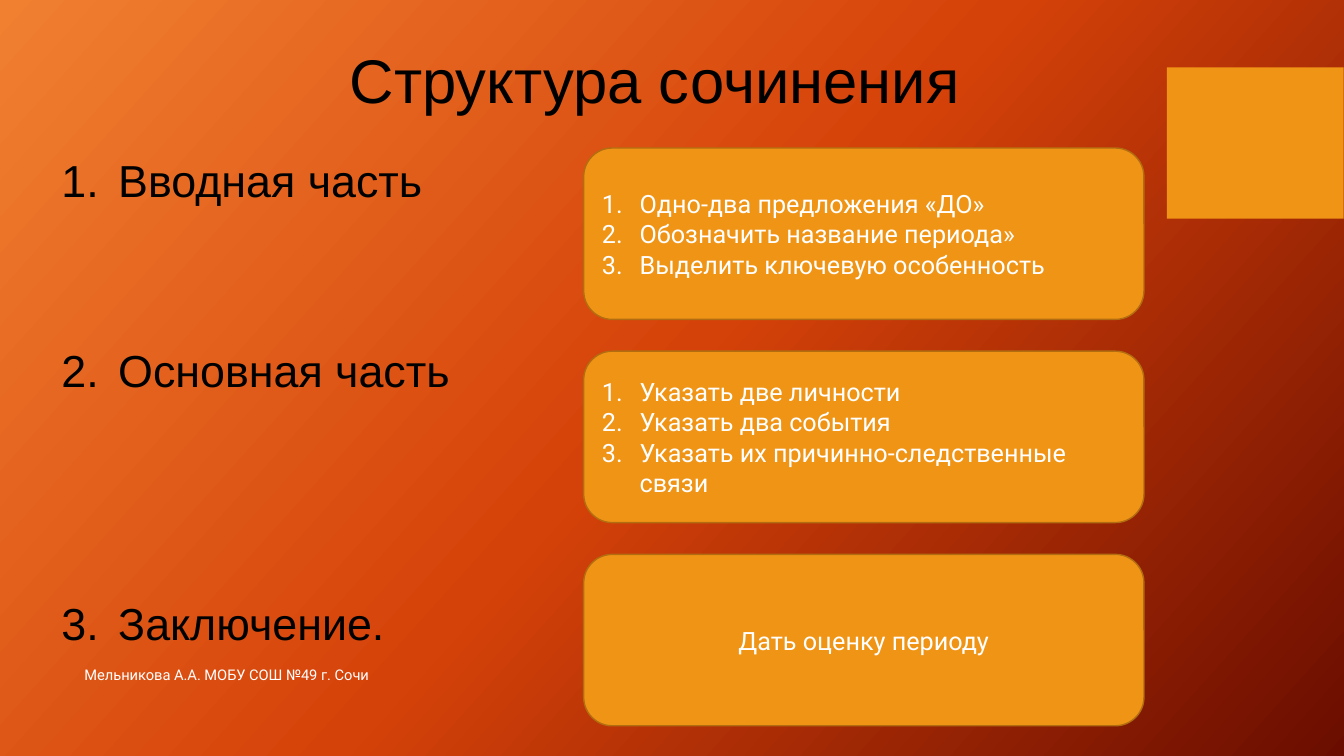
"""Build the slide about the structure of an essay."""
from copy import deepcopy
from dataclasses import dataclass

from lxml.etree import SubElement
from pptx import Presentation
from pptx.dml.color import RGBColor
from pptx.enum.shapes import MSO_SHAPE as Preset
from pptx.enum.text import MSO_ANCHOR as Anchor, PP_ALIGN as Align
from pptx.oxml.ns import qn
from pptx.util import Cm, Pt

ORANGE = RGBColor(0xF0, 0x94, 0x15)
BROWN = RGBColor(0xB2, 0x6D, 0x10)
BLACK = RGBColor(0, 0, 0)
WHITE = RGBColor(0xFF, 0xFF, 0xFF)
GRADIENT = [
    (0, RGBColor(0xF1, 0x80, 0x31)),
    (0.5, RGBColor(0xD5, 0x42, 0x09)),
    (1, RGBColor(0x6A, 0x0D, 0x00)),
]
CARD_LEFT, CARD_TOP, CARD_WIDTH, CARD_HEIGHT, CARD_STEP = 14.71, 3.73, 14.12, 4.32, 5.12


@dataclass(frozen=True)
class TextStyle:
    font: str
    size: float
    color: RGBColor
    indent: float = 0
    align: Align = Align.LEFT


@dataclass(frozen=True)
class Label:
    text: str
    left: float
    top: float
    width: float
    height: float
    style: TextStyle
    anchor: Anchor = Anchor.TOP
    wrap: bool = True


@dataclass(frozen=True)
class Part:
    title: str
    gap_before: float
    steps: list[str]
    style: TextStyle


TITLE = TextStyle("Arial", 44, BLACK)
HEADING = TextStyle("Arial", 32, BLACK, indent=1.43)
STEP = TextStyle("Roboto", 18, WHITE, indent=0.95)
SUMMARY = TextStyle("Roboto", 18, WHITE, align=Align.CENTER)
CREDIT = TextStyle("Roboto", 10.5, WHITE)

LABELS = [
    Label("Структура сочинения", 8.56, 0.94, 16.05, 2.13, TITLE, wrap=False),
    Label("Мельникова А.А. МОБУ СОШ №49 г. Сочи", 1.88, 16.48, 19.08, 1.02,
          CREDIT, Anchor.MIDDLE),
]
PARTS = [
    Part("Вводная часть", 0, [
        "Одно-два предложения «ДО»",
        "Обозначить название периода»",
        "Выделить ключевую особенность",
    ], STEP),
    Part("Основная часть", 97, [
        "Указать две личности",
        "Указать два события",
        "Указать их причинно-следственные связи",
    ], STEP),
    Part("Заключение.", 142.5, ["Дать оценку периоду"], SUMMARY),
]


def write(frame, lines: list[str], style: TextStyle) -> None:
    frame.word_wrap = True
    for index, line in enumerate(lines):
        paragraph = frame.paragraphs[0] if index == 0 else frame.add_paragraph()
        paragraph.text = line
        paragraph.alignment = style.align
        if style.indent:
            properties = paragraph._p.get_or_add_pPr()
            properties.set("marL", str(Cm(style.indent)))
            properties.set("indent", str(-Cm(style.indent)))
            SubElement(properties, qn("a:buFont"), typeface="+mj-lt")
            SubElement(properties, qn("a:buAutoNum"), type="arabicPeriod")
        paragraph.font.name = style.font
        paragraph.font.size = Pt(style.size)
        paragraph.font.color.rgb = style.color


def add_box(slide, preset: Preset, left: float, top: float, width: float, height: float):
    shape = slide.shapes.add_shape(preset, Cm(left), Cm(top), Cm(width), Cm(height))
    shape.shadow.inherit = False
    shape.fill.solid()
    shape.fill.fore_color.rgb = ORANGE
    shape.line.fill.background()
    return shape


def add_card(slide, row: int, part: Part) -> None:
    card = add_box(slide, Preset.ROUNDED_RECTANGLE, CARD_LEFT,
                   CARD_TOP + row * CARD_STEP, CARD_WIDTH, CARD_HEIGHT)
    card.line.color.rgb = BROWN
    card.line.width = Pt(1)
    card.text_frame.vertical_anchor = Anchor.MIDDLE
    write(card.text_frame, part.steps, part.style)


def add_label(slide, label: Label) -> None:
    box = slide.shapes.add_textbox(Cm(label.left), Cm(label.top), Cm(label.width), Cm(label.height))
    write(box.text_frame, [label.text], label.style)
    box.text_frame.word_wrap = label.wrap
    box.text_frame.vertical_anchor = label.anchor


def add_headings(slide, parts: list[Part]) -> None:
    box = slide.shapes.add_textbox(Cm(1.3), Cm(3.73), Cm(10.46), Cm(13.79))
    write(box.text_frame, [part.title for part in parts], HEADING)
    for paragraph, part in zip(box.text_frame.paragraphs, parts):
        if part.gap_before:
            paragraph.space_before = Pt(part.gap_before)


def paint_background(slide) -> None:
    fill = slide.background.fill
    fill.gradient()
    fill.gradient_angle = 360 - 42
    stop_list = slide.background._cSld.find(".//" + qn("a:gsLst"))
    stop_list.append(deepcopy(stop_list[-1]))
    for stop, (position, color) in zip(fill.gradient_stops, GRADIENT):
        stop.position = position
        stop.color.rgb = color


def main() -> None:
    presentation = Presentation()
    presentation.slide_width, presentation.slide_height = Cm(33.87), Cm(19.05)
    slide = presentation.slides.add_slide(presentation.slide_layouts[6])
    paint_background(slide)
    add_box(slide, Preset.RECTANGLE, 29.41, 1.7, 4.45, 3.81)
    add_headings(slide, PARTS)
    for row, part in enumerate(PARTS):
        add_card(slide, row, part)
    for label in LABELS:
        add_label(slide, label)
    presentation.save("out.pptx")


if __name__ == "__main__":
    main()
